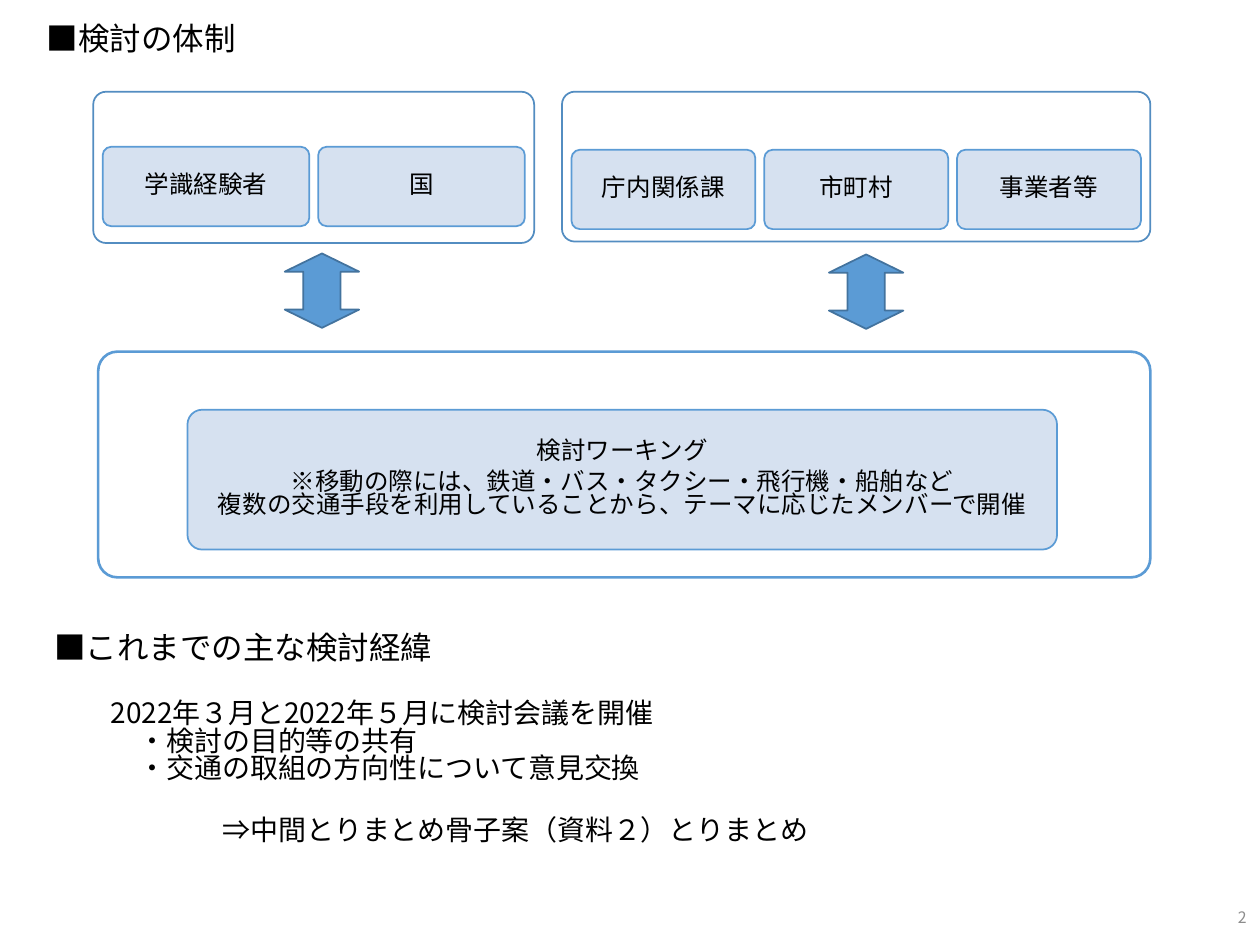
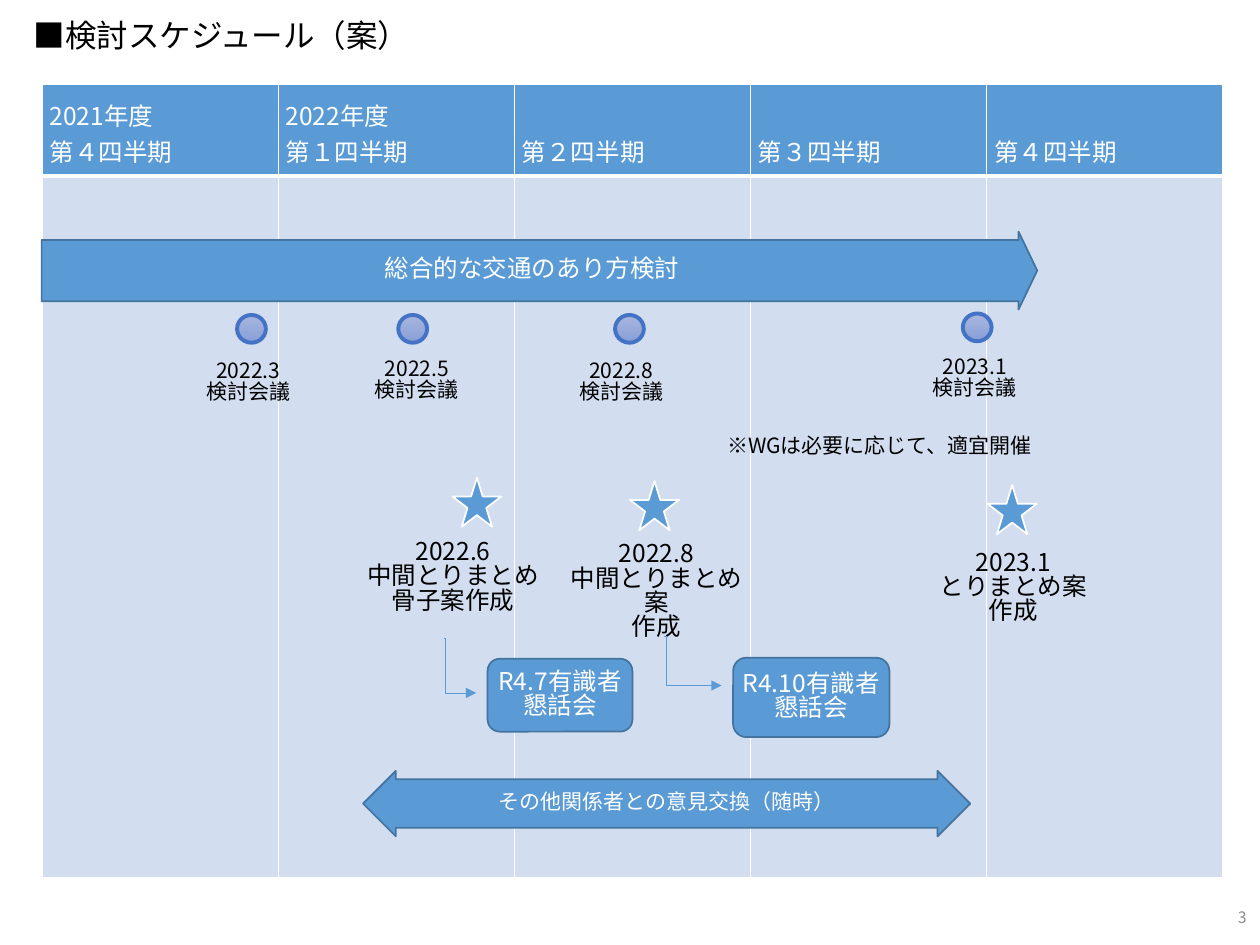
"""Builds two slides on a transport review: its structure and its schedule."""
import lxml.etree
import pptx
import pptx.dml.color
import pptx.enum.shapes
import pptx.enum.text
import pptx.oxml.ns
import pptx.util

Cm = pptx.util.Cm
Pt = pptx.util.Pt
qn = pptx.oxml.ns.qn
SHAPE = pptx.enum.shapes.MSO_SHAPE
ALIGN = pptx.enum.text.PP_ALIGN
ANCHOR = pptx.enum.text.MSO_ANCHOR

FONT = "Noto Sans CJK JP"
COLOURS = {
    "black": "000000", "white": "FFFFFF", "grey": "8C8C8C",
    "blue": "5B9BD5", "edge": "43739E", "frame": "538DC1", "pale": "D2DEEF",
    "ring": "4472C4", "dot_top": "A8B7DF", "dot_bottom": "889ED7",
}
TIGHT = 0.83
CARD_SPACING = 0.76
SMALL_MARGINS = (0.18, 0.1, 0.18, 0.1)
BOX_MARGINS = (0.25, 0.13, 0.25, 0.13)
NO_MARGINS = (0, 0, 0, 0)

STRUCTURE_TITLES = [("■検討の体制", 0.69, 0.38), ("■これまでの主な検討経緯", 0.84, 12.65)]
PANELS = [
    {"area": (1.88, 1.85, 8.89, 3.05), "card_top": 2.96, "members": ["学識経験者", "国"]},
    {"area": (11.33, 1.85, 11.86, 3.02), "card_top": 3.02,
     "members": ["庁内関係課", "市町村", "事業者等"]},
]
PANEL_PAD, CARD_GAP, CARD_HEIGHT = 0.19, 0.18, 1.6
EXCHANGE_ARROWS = [(5.74, 5.11), (16.71, 5.13)]
WORKING_PANEL = (1.98, 7.09, 21.21, 4.55)
WORKING_CARD = (3.78, 8.26, 17.53, 2.82)
WORKING_TEXT = [
    "検討ワーキング",
    "※移動の際には、鉄道・バス・タクシー・飛行機・船舶など",
    "複数の交通手段を利用していることから、テーマに応じたメンバーで開催",
]
HISTORY = [
    ("2022年３月と2022年５月に検討会議を開催", 0, 0),
    ("・検討の目的等の共有", 1, 0),
    ("・交通の取組の方向性について意見交換", 1, 0),
    ("⇒中間とりまとめ骨子案（資料２）とりまとめ", 4, 19),
]

SCHEDULE_TITLE = ("■検討スケジュール（案）", 0.43, 0.33)
QUARTERS = [
    ["2021年度", "第４四半期"], ["2022年度", "第１四半期"],
    ["第２四半期"], ["第３四半期"], ["第４四半期"],
]
TABLE_AREA = (0.85, 1.7, 23.8, 16)
HEADER_HEIGHT = 1.85
MEETINGS = [
    ("2022.3", (4.78, 6.35), (3.28, 7.19)),
    ("2022.5", (8.03, 6.35), (6.68, 7.16)),
    ("2022.8", (12.4, 6.35), (10.8, 7.19)),
    ("2023.1", (19.41, 6.32), (17.93, 7.11)),
]
MILESTONES = [
    (["2022.6", "中間とりまとめ", "骨子案作成"], (9.12, 9.63), (6.48, 10.8, 5.31)),
    (["2022.8", "中間とりまとめ案", "作成"], (12.7, 9.7), (11.1, 10.85, 4.27)),
    (["2023.1", "とりまとめ案", "作成"], (19.91, 9.78), (18.59, 11.02, 3.68)),
]
PANEL_TALKS = [
    (["R4.7有識者", "懇話会"], (9.83, 13.28, 2.92, 1.47)),
    (["R4.10有識者", "懇話会"], (14.78, 13.26, 3.15, 1.6)),
]
ELBOWS = [(8.95, 12.88, 9.6, 13.97), (13.39, 12.83, 14.55, 13.82)]


def rgb(name):
    return pptx.dml.color.RGBColor.from_string(COLOURS[name])


def set_all(target, values):
    for name, value in values.items():
        setattr(target, name, value)


def write(frame, lines, size, colour="black", align=ALIGN.CENTER, anchor=ANCHOR.TOP,
          margins=SMALL_MARGINS, spacing=TIGHT):
    sides = ("margin_left", "margin_top", "margin_right", "margin_bottom")
    set_all(frame, {"word_wrap": True, "vertical_anchor": anchor})
    set_all(frame, dict(zip(sides, map(Cm, margins))))
    for index, line in enumerate(lines):
        para = frame.paragraphs[0] if index == 0 else frame.add_paragraph()
        set_all(para, {"alignment": align, "line_spacing": spacing})
        span = para.add_run()
        span.text = line
        set_all(span.font, {"size": Pt(size), "name": FONT})
        span.font.color.rgb = rgb(colour)
        lxml.etree.SubElement(span._r.get_or_add_rPr(), qn("a:ea"), typeface=FONT)
    return frame


def add_text(page, area, lines, size, **style):
    box = page.shapes.add_textbox(*map(Cm, area))
    return write(box.text_frame, lines, size, **style)


def add_shape(page, kind, area, fill="blue", line="edge", width=1, adjust=()):
    shape = page.shapes.add_shape(kind, *map(Cm, area))
    shape.shadow.inherit = False
    shape.fill.solid()
    shape.fill.fore_color.rgb = rgb(fill)
    shape.line.color.rgb = rgb(line)
    shape.line.width = Pt(width)
    for index, value in enumerate(adjust):
        shape.adjustments[index] = value
    return shape


def add_panel(page, area, line, width):
    add_shape(page, SHAPE.ROUNDED_RECTANGLE, area, "white", line, width, [0.085])


def add_card(page, area, lines):
    card = add_shape(page, SHAPE.ROUNDED_RECTANGLE, area, "pale", "blue", adjust=[0.105])
    tint = card.fill._xPr.find(qn("a:solidFill"))[0]
    lxml.etree.SubElement(tint, qn("a:alpha"), val="90000")
    frame = write(card.text_frame, lines, 14, anchor=ANCHOR.MIDDLE, spacing=CARD_SPACING)
    frame.paragraphs[0].space_after = Pt(5 if len(lines) > 1 else 0)


def add_title(page, text, left, top):
    add_text(page, (left, top, 9.3, 1.02), [text], 18, align=ALIGN.LEFT, margins=BOX_MARGINS)


def add_page(deck, number):
    page = deck.slides.add_slide(deck.slide_layouts[6])
    add_text(page, (19.66, 18.01, 5.72, 1.02), [str(number)], 9, colour="grey",
             align=ALIGN.RIGHT, anchor=ANCHOR.MIDDLE, margins=BOX_MARGINS)
    return page


def add_elbow(page, ends):
    elbow = page.shapes.add_connector(pptx.enum.shapes.MSO_CONNECTOR.ELBOW, *map(Cm, ends))
    elbow.line.color.rgb = rgb("blue")
    elbow.line.width = Pt(0.5)
    lxml.etree.SubElement(elbow.line._get_or_add_ln(), qn("a:tailEnd"), type="triangle")
    properties = elbow._element.spPr
    lxml.etree.SubElement(properties, qn("a:effectLst"))
    guides = properties.find(qn("a:prstGeom")).get_or_add_avLst()
    lxml.etree.SubElement(guides, qn("a:gd"), name="adj1", fmla="val 3500")


def style_cell(cell, fill, bottom):
    cell.fill.solid()
    cell.fill.fore_color.rgb = rgb(fill)
    properties = cell._tc.get_or_add_tcPr()
    for index, (side, width) in enumerate(
            [("lnL", 1), ("lnR", 1), ("lnT", 1), ("lnB", bottom)]):
        border = lxml.etree.Element(qn("a:" + side), w=str(Pt(width)))
        paint = lxml.etree.SubElement(border, qn("a:solidFill"))
        lxml.etree.SubElement(paint, qn("a:srgbClr"), val=COLOURS["white"])
        properties.insert(index, border)


def add_calendar(page):
    table = page.shapes.add_table(2, len(QUARTERS), *map(Cm, TABLE_AREA)).table
    table.rows[0].height = Cm(HEADER_HEIGHT)
    table.rows[1].height = Cm(TABLE_AREA[3] - HEADER_HEIGHT)
    for column, lines in enumerate(QUARTERS):
        table.columns[column].width = Cm(TABLE_AREA[2] / len(QUARTERS))
        header, body = table.cell(0, column), table.cell(1, column)
        style_cell(header, "blue", 3)
        style_cell(body, "pale", 1)
        write(header.text_frame, lines, 14, "white", align=ALIGN.LEFT, spacing=1)
        set_all(header, {"vertical_anchor": ANCHOR.BOTTOM, "margin_left": Cm(0.15),
                         "margin_right": Cm(0.15), "margin_top": 0, "margin_bottom": Cm(0.15)})


def build_structure(deck):
    page = add_page(deck, 2)
    for title in STRUCTURE_TITLES:
        add_title(page, *title)
    for panel in PANELS:
        left, top, width, height = panel["area"]
        members = panel["members"]
        add_panel(page, panel["area"], "frame", 1)
        pitch = (width - 2 * PANEL_PAD + CARD_GAP) / len(members)
        for index, member in enumerate(members):
            card_left = left + PANEL_PAD + index * pitch
            add_card(page, (card_left, panel["card_top"], pitch - CARD_GAP, CARD_HEIGHT), [member])
    for left, top in EXCHANGE_ARROWS:
        arrow = add_shape(page, SHAPE.LEFT_RIGHT_ARROW, (left, top, 1.5, 1.5),
                          adjust=[0.5, 0.245])
        arrow.rotation = 90
    add_panel(page, WORKING_PANEL, "blue", 1.5)
    add_card(page, WORKING_CARD, WORKING_TEXT)
    history = add_text(page, (1.98, 14, 21.79, 3.68), [line for line, _, _ in HISTORY], 16,
                       align=ALIGN.LEFT, margins=BOX_MARGINS)
    for para, (_, indent, gap) in zip(history.paragraphs, HISTORY):
        para.space_before = Pt(gap)
        para._p.get_or_add_pPr().set("marL", str(Pt(16 * indent)))


def build_schedule(deck):
    page = add_page(deck, 3)
    add_title(page, *SCHEDULE_TITLE)
    add_calendar(page)
    white_label = {"colour": "white", "anchor": ANCHOR.MIDDLE, "margins": NO_MARGINS}
    review = add_shape(page, SHAPE.RIGHT_ARROW, (0.84, 4.67, 20.07, 1.57), adjust=[0.786, 0.239])
    write(review.text_frame, ["総合的な交通のあり方検討"], 14, **white_label)
    for date, dot_place, label_place in MEETINGS:
        dot = add_shape(page, SHAPE.OVAL, (*dot_place, 0.58, 0.56), line="ring", width=2.25)
        dot.fill.gradient()
        dot.fill.gradient_angle = 270
        for stop, (colour, position) in zip(dot.fill.gradient_stops,
                                            [("dot_top", 0), ("dot_bottom", 1)]):
            stop.color.rgb = rgb(colour)
            stop.position = position
        add_text(page, (*label_place, 3.45, 1.2), [date, "検討会議"], 12)
    add_text(page, (13.69, 8.71, 8.08, 0.74), ["※WGは必要に応じて、適宜開催"], 12)
    for lines, star_place, label_place in MILESTONES:
        add_shape(page, SHAPE.STAR_5_POINT, (*star_place, 0.99, 0.99), line="white")
        add_text(page, (*label_place, 1.5), lines, 14)
    for lines, area in PANEL_TALKS:
        talk = add_shape(page, SHAPE.ROUNDED_RECTANGLE, area)
        write(talk.text_frame, lines, 14, **white_label)
    for ends in ELBOWS:
        add_elbow(page, ends)
    opinions = add_shape(page, SHAPE.LEFT_RIGHT_ARROW, (7.32, 15.54, 12.24, 1.32),
                         adjust=[0.74, 0.5])
    write(opinions.text_frame, ["その他関係者との意見交換（随時）"], 12, **white_label)


def main():
    deck = pptx.Presentation()
    set_all(deck, {"slide_width": Cm(25.4), "slide_height": Cm(19.05)})
    build_structure(deck)
    build_schedule(deck)
    deck.save("out.pptx")


if __name__ == "__main__":
    main()
